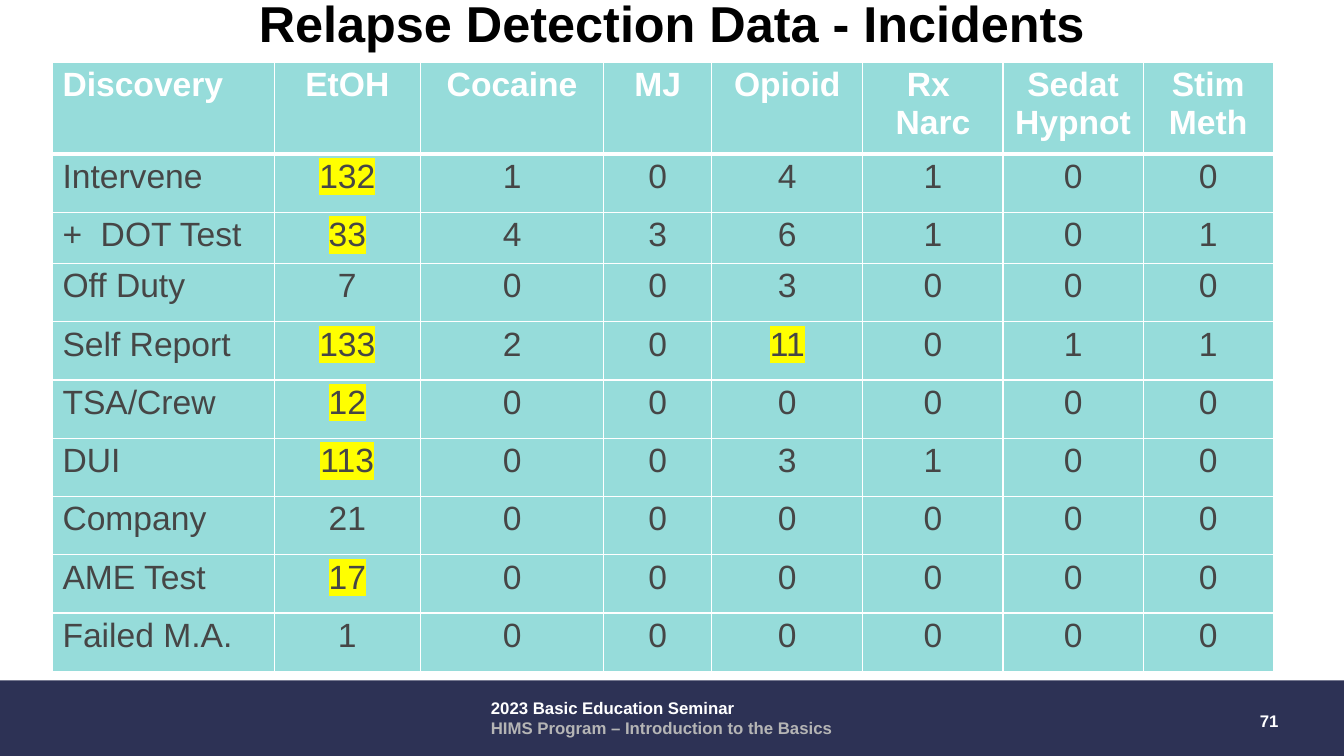
from dataclasses import dataclass

from lxml.etree import SubElement
from pptx import Presentation
from pptx.dml.color import RGBColor
from pptx.enum.shapes import MSO_SHAPE
from pptx.enum.text import MSO_ANCHOR, PP_ALIGN
from pptx.oxml import parse_xml
from pptx.oxml.ns import nsdecls, qn
from pptx.util import Inches, Pt


@dataclass(frozen=True)
class Theme:
    font: str = "Arial"
    title_size: int = 36
    table_size: int = 24
    footer_size: int = 12
    black: str = "000000"
    white: str = "FFFFFF"
    body: str = "464646"
    muted: str = "B5B5B5"
    navy: str = "2D3255"
    teal: str = "96DCDA"
    highlight: str = "FFFF00"
    thin_line: int = 1
    thick_line: int = 3


THEME = Theme()

COLUMN_WIDTHS = [2.2, 1.45, 1.82, 1.07, 1.5, 1.39, 1.39, 1.29]
ROW_HEIGHTS = [0.91, 0.58, 0.51] + [0.58] * 7
HEADERS = ["Discovery", "EtOH", "Cocaine", "MJ", "Opioid",
           "Rx \nNarc", "Sedat\nHypnot", "Stim\nMeth"]
INCIDENTS = [
    ["Intervene", 132, 1, 0, 4, 1, 0, 0],
    ["+  DOT Test", 33, 4, 3, 6, 1, 0, 1],
    ["Off Duty", 7, 0, 0, 3, 0, 0, 0],
    ["Self Report", 133, 2, 0, 11, 0, 1, 1],
    ["TSA/Crew", 12, 0, 0, 0, 0, 0, 0],
    ["DUI", 113, 0, 0, 3, 1, 0, 0],
    ["Company", 21, 0, 0, 0, 0, 0, 0],
    ["AME Test", 17, 0, 0, 0, 0, 0, 0],
    ["Failed M.A.", 1, 0, 0, 0, 0, 0, 0],
]
HIGHLIGHTED = {(1, 1), (2, 1), (4, 1), (4, 4), (5, 1), (6, 1), (8, 1)}


def add_run(paragraph, text, size, color, bold=True):
    run = paragraph.add_run()
    run.text = text
    run.font.name = THEME.font
    run.font.size = Pt(size)
    run.font.bold = bold
    run.font.color.rgb = RGBColor.from_string(color)
    return run


def highlight_run(run, color):
    fill = run.font._element.find(qn("a:solidFill"))
    fill.addnext(parse_xml(
        f'<a:highlight {nsdecls("a")}><a:srgbClr val="{color}"/></a:highlight>'))


def set_borders(cell, top, bottom):
    properties = cell._tc.get_or_add_tcPr()
    widths = {"lnL": THEME.thin_line, "lnR": THEME.thin_line,
              "lnT": top, "lnB": bottom}
    for position, (side, width) in enumerate(widths.items()):
        line = SubElement(properties, qn(f"a:{side}"), w=str(Pt(width)))
        fill = SubElement(line, qn("a:solidFill"))
        SubElement(fill, qn("a:srgbClr"), val=THEME.white)
        properties.insert(position, line)


def add_title(slide, left, top, width, height):
    title = slide.shapes.title
    title.left, title.top = Inches(left), Inches(top)
    title.width, title.height = Inches(width), Inches(height)
    title.text_frame.vertical_anchor = MSO_ANCHOR.MIDDLE
    paragraph = title.text_frame.paragraphs[0]
    paragraph.alignment = PP_ALIGN.CENTER
    add_run(paragraph, "Relapse Detection Data - Incidents",
            THEME.title_size, THEME.black)


def fill_cell(cell, text, row, column):
    is_header = row == 0
    cell.fill.solid()
    cell.fill.fore_color.rgb = RGBColor.from_string(THEME.teal)
    cell.margin_left = cell.margin_right = Inches(0.1)
    cell.margin_top = cell.margin_bottom = Inches(0.04)
    set_borders(cell,
                THEME.thick_line if row == 1 else THEME.thin_line,
                THEME.thick_line if is_header else THEME.thin_line)
    for index, line in enumerate(text.split("\n")):
        frame = cell.text_frame
        paragraph = frame.add_paragraph() if index else frame.paragraphs[0]
        paragraph.alignment = PP_ALIGN.CENTER if column else PP_ALIGN.LEFT
        run = add_run(paragraph, line, THEME.table_size,
                      THEME.white if is_header else THEME.body, is_header)
        if (row, column) in HIGHLIGHTED:
            highlight_run(run, THEME.highlight)


def add_incident_table(slide, left, top, width, height):
    rows = [HEADERS] + INCIDENTS
    table = slide.shapes.add_table(
        len(rows), len(HEADERS), Inches(left), Inches(top),
        Inches(width), Inches(height)).table
    table.horz_banding = False
    for column, share in zip(table.columns, COLUMN_WIDTHS):
        column.width = Inches(width * share / sum(COLUMN_WIDTHS))
    for row, share in zip(table.rows, ROW_HEIGHTS):
        row.height = Inches(height * share / sum(ROW_HEIGHTS))
    for row, values in enumerate(rows):
        for column, value in enumerate(values):
            fill_cell(table.cell(row, column), str(value), row, column)


def add_footer_text(slide, left, top, width, height):
    box = slide.shapes.add_textbox(
        Inches(left), Inches(top), Inches(width), Inches(height))
    box.text_frame.word_wrap = True
    return box.text_frame.paragraphs[0]


def add_footer(slide, left, top, width, height):
    bar = slide.shapes.add_shape(
        MSO_SHAPE.RECTANGLE, Inches(left), Inches(top),
        Inches(width), Inches(height))
    bar.shadow.inherit = False
    bar.fill.solid()
    bar.fill.fore_color.rgb = RGBColor.from_string(THEME.navy)
    bar.line.fill.background()

    seminar = add_footer_text(slide, left + 4.77, top + 0.12, 3.79, 0.5)
    add_run(seminar, "2023 Basic Education Seminar",
            THEME.footer_size, THEME.white)
    seminar.add_line_break()
    add_run(seminar, "HIMS Program – Introduction to the Basics",
            THEME.footer_size, THEME.muted)

    number = add_footer_text(slide, left + 12.11, top + 0.25, 0.67, 0.25)
    number.alignment = PP_ALIGN.RIGHT
    add_run(number, "71", THEME.footer_size, THEME.white)


def main():
    presentation = Presentation()
    presentation.slide_width = Inches(13.33)
    presentation.slide_height = Inches(7.5)
    slide = presentation.slides.add_slide(presentation.slide_layouts[5])
    add_footer(slide, 0, 6.75, 13.33, 0.75)
    add_incident_table(slide, 0.52, 0.62, 12.11, 6.04)
    add_title(slide, 0.61, -0.17, 12.11, 0.78)
    presentation.save("out.pptx")


if __name__ == "__main__":
    main()
